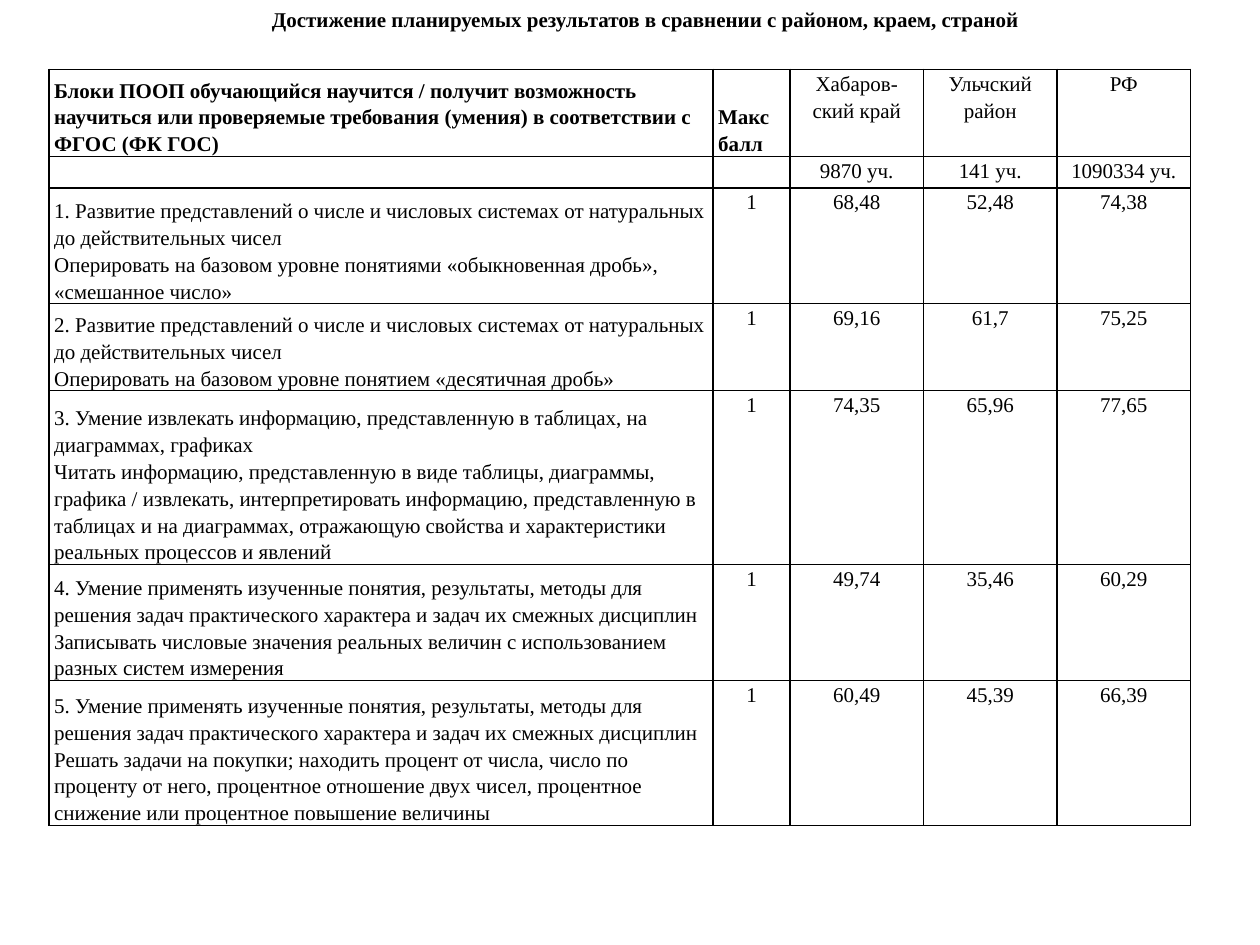
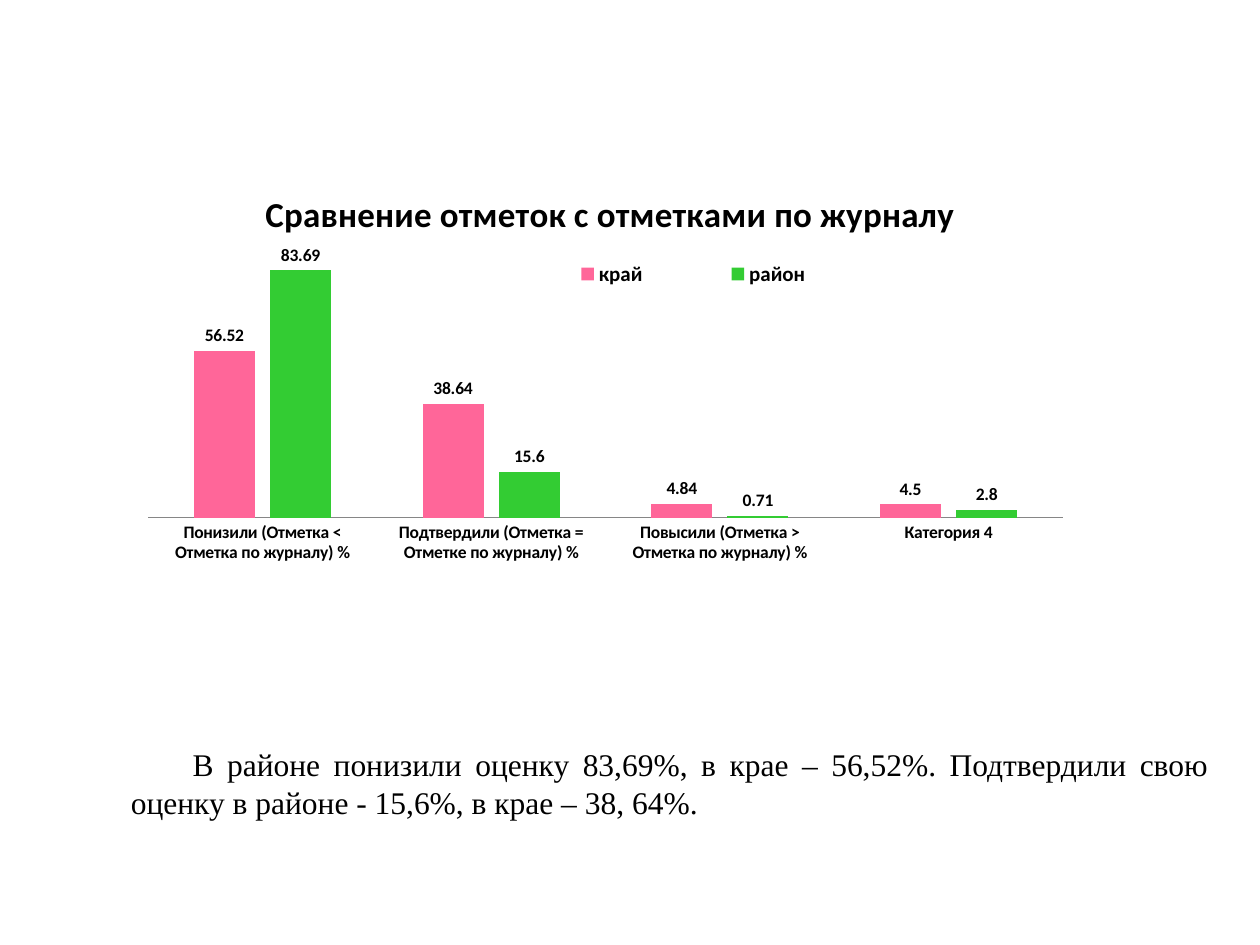
from dataclasses import dataclass

from lxml.etree import SubElement
from pptx import Presentation
from pptx.chart.data import CategoryChartData
from pptx.dml.color import RGBColor
from pptx.enum.chart import XL_CHART_TYPE, XL_LABEL_POSITION, XL_LEGEND_POSITION, XL_TICK_MARK
from pptx.enum.text import MSO_ANCHOR, PP_ALIGN
from pptx.oxml import parse_xml
from pptx.oxml.ns import nsdecls, qn
from pptx.util import Inches, Pt


@dataclass(frozen=True)
class Theme:
    ink: str = "000000"
    axis: str = "868686"
    region: str = "FF6699"
    district: str = "33CC33"
    text_font: str = "Times New Roman"
    chart_font: str = "Calibri"
    table_size: int = 12
    body_size: int = 18
    chart_title_size: int = 20
    legend_size: int = 12
    label_size: int = 10
    border: float = 1


theme = Theme()
ink = RGBColor.from_string(theme.ink)


def write(frame, text, size=theme.table_size, bold=False, align=PP_ALIGN.LEFT,
          spacing=None, indent=0):
    """Fill the first paragraph; line breaks and empty text keep the given size."""
    paragraph = frame.paragraphs[0]
    paragraph.text = text
    paragraph.alignment = align
    if spacing:
        paragraph.line_spacing = spacing
    if indent:
        paragraph._p.get_or_add_pPr().set("indent", str(int(Inches(indent))))
    for span in paragraph.runs:
        span.font.name = theme.text_font
        span.font.size = Pt(size)
        span.font.bold = bold
        span.font.color.rgb = ink
    for line_break in paragraph._p.findall(qn("a:br")):
        SubElement(line_break, qn("a:rPr"), sz=str(size * 100))
    if not text:
        SubElement(paragraph._p, qn("a:endParaRPr"), sz=str(size * 100))


def place(parent, index, target, **sides):
    """Insert a manual chart layout given in fractions of the chart."""
    inner = '<c:layoutTarget val="inner"/>' if target == "inner" else ""
    modes = "".join(f'<c:{side}Mode val="edge"/>' for side in "xy")
    values = "".join(f'<c:{side} val="{value}"/>' for side, value in sides.items())
    for layout in parent.findall(qn("c:layout")):
        parent.remove(layout)
    parent.insert(index, parse_xml(
        f'<c:layout {nsdecls("c")}><c:manualLayout>{inner}{modes}{values}'
        '</c:manualLayout></c:layout>'))


deck = Presentation()
deck.slide_width, deck.slide_height = Inches(10), Inches(7.5)
blank = deck.slide_layouts[6]

# Results table
page = deck.slides.add_slide(blank)
box = page.shapes.add_textbox(Inches(1.48), Inches(0), Inches(6.8), Inches(0.3))
box.text_frame.word_wrap = False
box.text_frame.vertical_anchor = MSO_ANCHOR.MIDDLE
write(box.text_frame,
      "Достижение планируемых результатов в сравнении с районом, краем, страной",
      bold=True, align=PP_ALIGN.CENTER, indent=0.49)

numbers = "Развитие представлений о числе и числовых системах от натуральных до действительных чисел"
practice = ("Умение применять изученные понятия, результаты, методы для решения задач "
            "практического характера и задач их смежных дисциплин")
skills = [
    (numbers, "Оперировать на базовом уровне понятиями «обыкновенная дробь», «смешанное число»",
     "68,48", "52,48", "74,38"),
    (numbers, "Оперировать на базовом уровне понятием «десятичная дробь»",
     "69,16", "61,7", "75,25"),
    ("Умение извлекать информацию, представленную в таблицах, на диаграммах, графиках",
     "Читать информацию, представленную в виде таблицы, диаграммы, графика / извлекать, "
     "интерпретировать информацию, представленную в таблицах и на диаграммах, отражающую "
     "свойства и характеристики реальных процессов и явлений",
     "74,35", "65,96", "77,65"),
    (practice, "Записывать числовые значения реальных величин с использованием разных систем измерения",
     "49,74", "35,46", "60,29"),
    (practice, "Решать задачи на покупки; находить процент от числа, число по проценту от него, "
     "процентное отношение двух чисел, процентное снижение или процентное повышение величины",
     "60,49", "45,39", "66,39"),
]
rows = [
    ("Блоки ПООП обучающийся научится / получит возможность научиться или проверяемые "
     "требования (умения) в соответствии с ФГОС (ФК ГОС)",
     "Макс балл", "Хабаров-ский край", "Ульчский район", "РФ"),
    ("", "", "9870 уч.", "141 уч.", "1090334 уч."),
]
for number, (block, skill, *scores) in enumerate(skills, 1):
    rows.append((f"{number}. {block}\n{skill}", "1", *scores))

widths = [5.27, 0.61, 1.06, 1.06, 1.06]
heights = [0.69, 0.25, 0.92, 0.69, 1.38, 0.92, 1.15]
table = page.shapes.add_table(len(rows), len(widths), Inches(0.39), Inches(0.55),
                              Inches(sum(widths)), Inches(sum(heights))).table
table.first_row = table.horz_banding = False
for column, width in zip(table.columns, widths):
    column.width = Inches(width)
for row, height in zip(table.rows, heights):
    row.height = Inches(height)

for r, texts in enumerate(rows):
    for c, text in enumerate(texts):
        cell = table.cell(r, c)
        heading = r == 0 and c < 2
        left_aligned = heading or c == 0
        cell.margin_left = cell.margin_right = Inches(0.04)
        cell.margin_top = cell.margin_bottom = 0
        cell.vertical_anchor = MSO_ANCHOR.BOTTOM if left_aligned else MSO_ANCHOR.TOP
        write(cell.text_frame, text, bold=heading, spacing=1.15,
              align=PP_ALIGN.LEFT if left_aligned else PP_ALIGN.CENTER)
        properties = cell._tc.get_or_add_tcPr()
        for side in ("lnL", "lnR", "lnT", "lnB"):
            line = SubElement(properties, qn(f"a:{side}"), w=str(int(Pt(theme.border))))
            SubElement(SubElement(line, qn("a:solidFill")), qn("a:srgbClr"), val=theme.ink)
        cell.fill.background()

# Chart of marks
page = deck.slides.add_slide(blank)
data = CategoryChartData()
data.categories = [
    "Понизили (Отметка < Отметка по журналу) %",
    "Подтвердили (Отметка = Отметке по журналу) %",
    "Повысили (Отметка > Отметка по журналу) %",
    "Категория 4",
]
data.add_series("край", (56.52, 38.64, 4.84, 4.5))
data.add_series("район", (83.69, 15.6, 0.71, 2.8))
chart = page.shapes.add_chart(XL_CHART_TYPE.COLUMN_CLUSTERED, Inches(1.17), Inches(1.33),
                              Inches(7.34), Inches(3.52), data).chart
chart.font.name = theme.chart_font
chart.font.size = Pt(theme.label_size)
chart.font.bold = True
chart.font.color.rgb = ink

chart.has_title = True
chart.chart_title.text_frame.text = "Сравнение отметок с отметками по журналу"
title_font = chart.chart_title.text_frame.paragraphs[0].runs[0].font
title_font.name = theme.chart_font
title_font.size = Pt(theme.chart_title_size)
title_font.bold = True
title_font.color.rgb = ink

chart.has_legend = True
chart.legend.position = XL_LEGEND_POSITION.TOP
chart.legend.include_in_layout = False
chart.legend.font.size = Pt(theme.legend_size)
chart.legend.font.bold = True
place(chart.legend._element, 1, "outer", x=0.38, y=0.19, w=0.42, h=0.1)
place(chart._chartSpace.chart.plotArea, 0, "inner", x=0.0, y=0.19, w=0.99, h=0.6)

plot = chart.plots[0]
plot.gap_width, plot.overlap = 150, -25
plot.vary_by_categories = False
for series, color in zip(plot.series, (theme.region, theme.district)):
    series.format.fill.solid()
    series.format.fill.fore_color.rgb = RGBColor.from_string(color)
    series.data_labels.show_value = True
    series.data_labels.position = XL_LABEL_POSITION.OUTSIDE_END

chart.value_axis.visible = False
chart.value_axis.has_major_gridlines = False
chart.value_axis.minimum_scale, chart.value_axis.maximum_scale = 0, 90
chart.category_axis.major_tick_mark = XL_TICK_MARK.NONE
chart.category_axis.format.line.color.rgb = RGBColor.from_string(theme.axis)

box = page.shapes.add_textbox(Inches(0.94), Inches(5.86), Inches(8.75), Inches(0.71))
box.text_frame.word_wrap = True
box.text_frame.vertical_anchor = MSO_ANCHOR.MIDDLE
write(box.text_frame,
      "В районе понизили оценку 83,69%, в крае – 56,52%. Подтвердили свою оценку "
      "в районе - 15,6%, в крае – 38, 64%.",
      size=theme.body_size, align=PP_ALIGN.JUSTIFY, indent=0.49)

deck.save("out.pptx")
